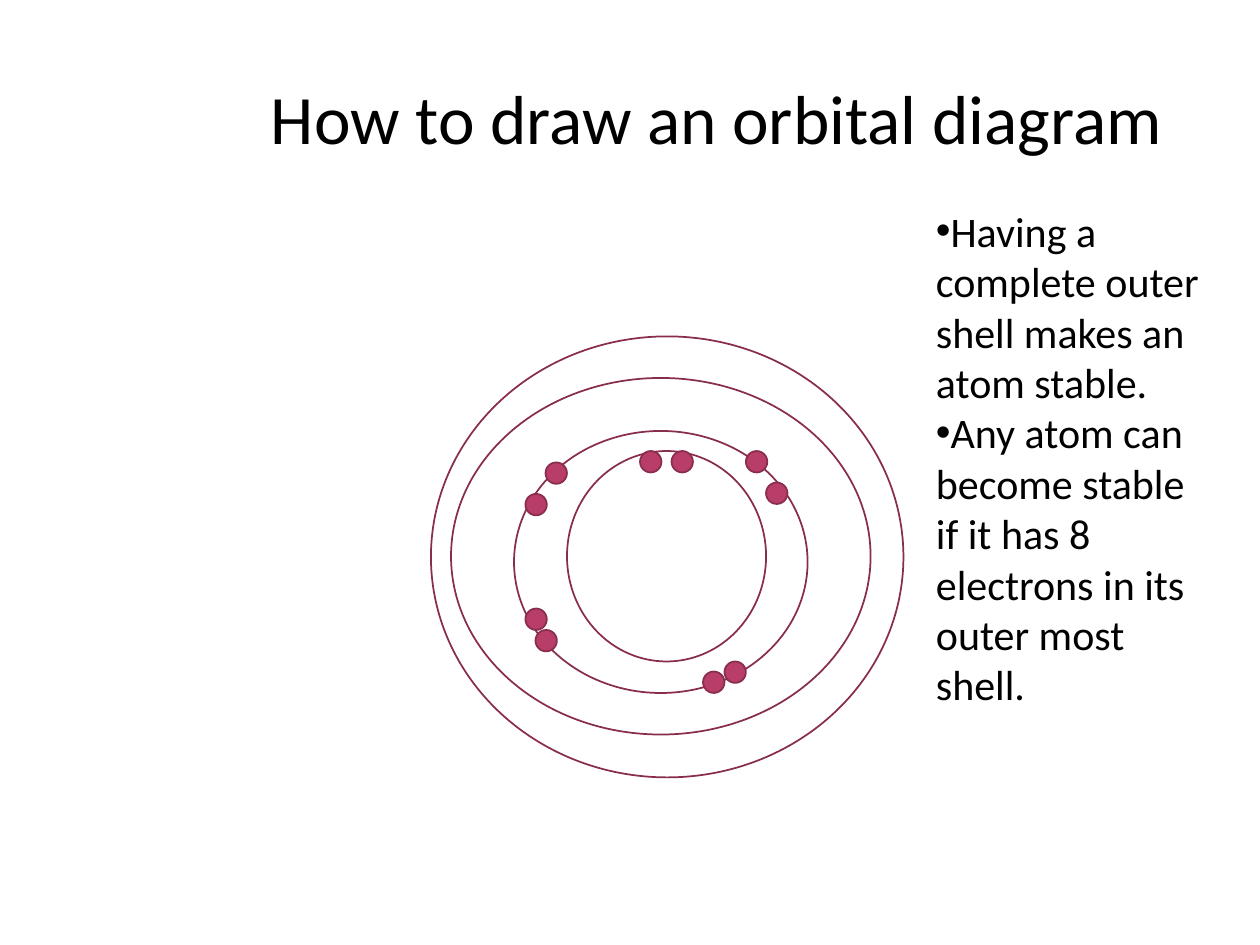
"""Build a slide that explains how to draw an orbital diagram."""
from lxml.etree import SubElement
from pptx import Presentation
from pptx.dml.color import RGBColor
from pptx.enum.shapes import MSO_SHAPE
from pptx.enum.text import MSO_ANCHOR, MSO_AUTO_SIZE, PP_ALIGN
from pptx.oxml.ns import qn
from pptx.util import Inches, Pt

TITLE = "How to draw an orbital diagram "
POINTS = [
    "Having a complete outer shell makes an atom stable.",
    "Any atom can become stable if it has 8 electrons in its outer most shell.",
]
SHELLS = [
    (4.5, 3.58, 1.58, 1.67),
    (4.08, 3.42, 2.33, 2.08),
    (3.58, 3, 3.33, 2.83),
    (3.42, 2.67, 3.75, 3.5),
]
ELECTRON_SIZE = 0.17
ELECTRON_PAIRS = [
    [(5.33, 3.58), (5.08, 3.58)],
    [(5.92, 3.58), (6.08, 3.83)],
    [(5.75, 5.25), (5.58, 5.33)],
    [(4.25, 5), (4.17, 4.83)],
    [(4.17, 3.92), (4.33, 3.67)],
]
COLORS = {"text": "000000", "line": "882D4D", "electron": "B83D68"}


def write(paragraph, text, size, align=PP_ALIGN.LEFT, bullet=None):
    paragraph.alignment = align
    if bullet:
        properties = paragraph._p.get_or_add_pPr()
        SubElement(properties, qn("a:buFont"), typeface="Arial")
        SubElement(properties, qn("a:buChar"), char=bullet)
    span = paragraph.add_run()
    span.text = text
    span.font.name = "Calibri"
    span.font.size = Pt(size)
    span.font.color.rgb = RGBColor.from_string(COLORS["text"])


def add_circle(slide, left, top, width, height, fill=None):
    circle = slide.shapes.add_shape(
        MSO_SHAPE.FLOWCHART_CONNECTOR, *map(Inches, (left, top, width, height)))
    circle.shadow.inherit = False
    circle.line.color.rgb = RGBColor.from_string(COLORS["line"])
    circle.line.width = Pt(1)
    if fill:
        circle.fill.solid()
        circle.fill.fore_color.rgb = RGBColor.from_string(fill)
    else:
        circle.fill.background()


def main():
    deck = Presentation()
    deck.slide_width, deck.slide_height = Inches(10), Inches(7.5)
    slide = deck.slides.add_slide(deck.slide_layouts[5])

    title = slide.shapes.title
    title.left, title.top = Inches(2), Inches(0.3)
    title.width, title.height = Inches(7.5), Inches(1.25)
    title.text_frame.vertical_anchor = MSO_ANCHOR.MIDDLE
    write(title.text_frame.paragraphs[0], TITLE, 39.6, align=PP_ALIGN.CENTER)

    for shell in SHELLS:
        add_circle(slide, *shell)
    for pair in ELECTRON_PAIRS:
        for left, top in pair:
            add_circle(slide, left, top, ELECTRON_SIZE, ELECTRON_SIZE,
                       fill=COLORS["electron"])

    box = slide.shapes.add_textbox(*map(Inches, (7.33, 1.58, 2.33, 4.44)))
    frame = box.text_frame
    frame.word_wrap = True
    frame.auto_size = MSO_AUTO_SIZE.SHAPE_TO_FIT_TEXT
    for index, point in enumerate(POINTS):
        paragraph = frame.add_paragraph() if index else frame.paragraphs[0]
        write(paragraph, point, 24, bullet="•")

    deck.save("out.pptx")


if __name__ == "__main__":
    main()
